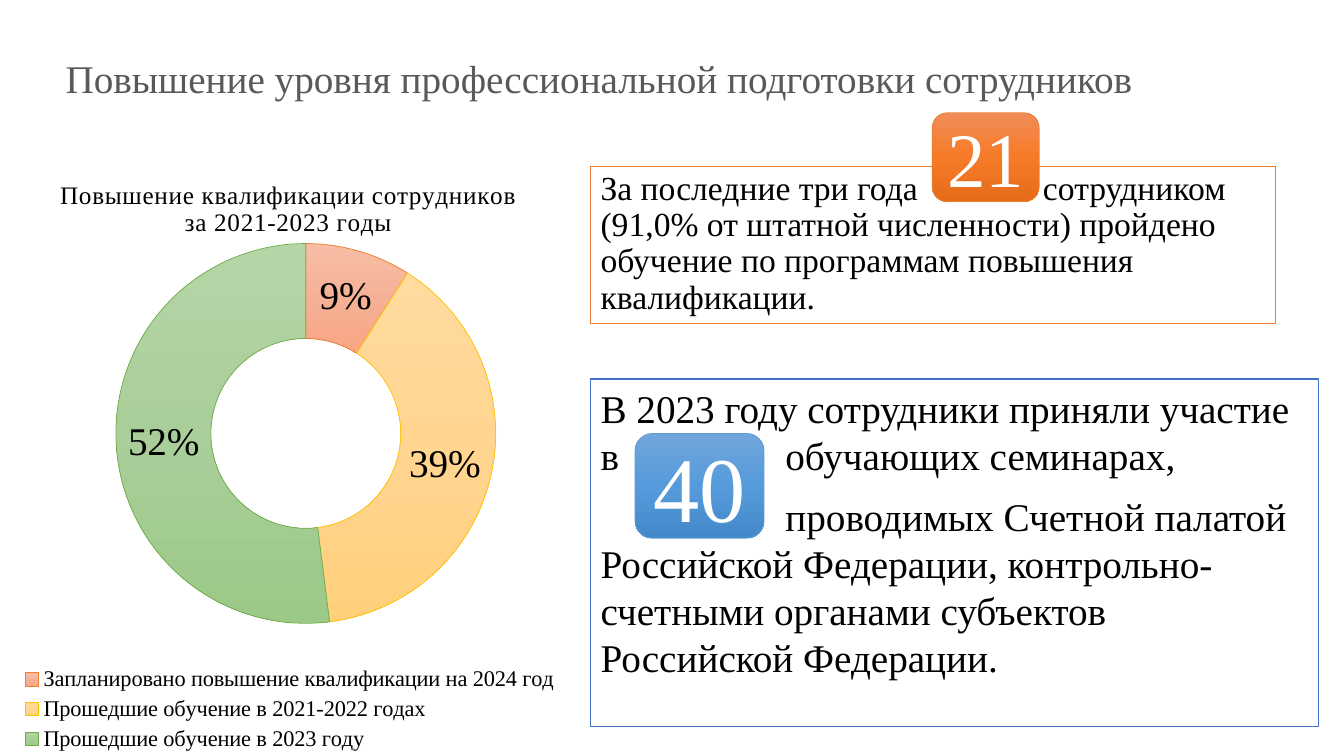
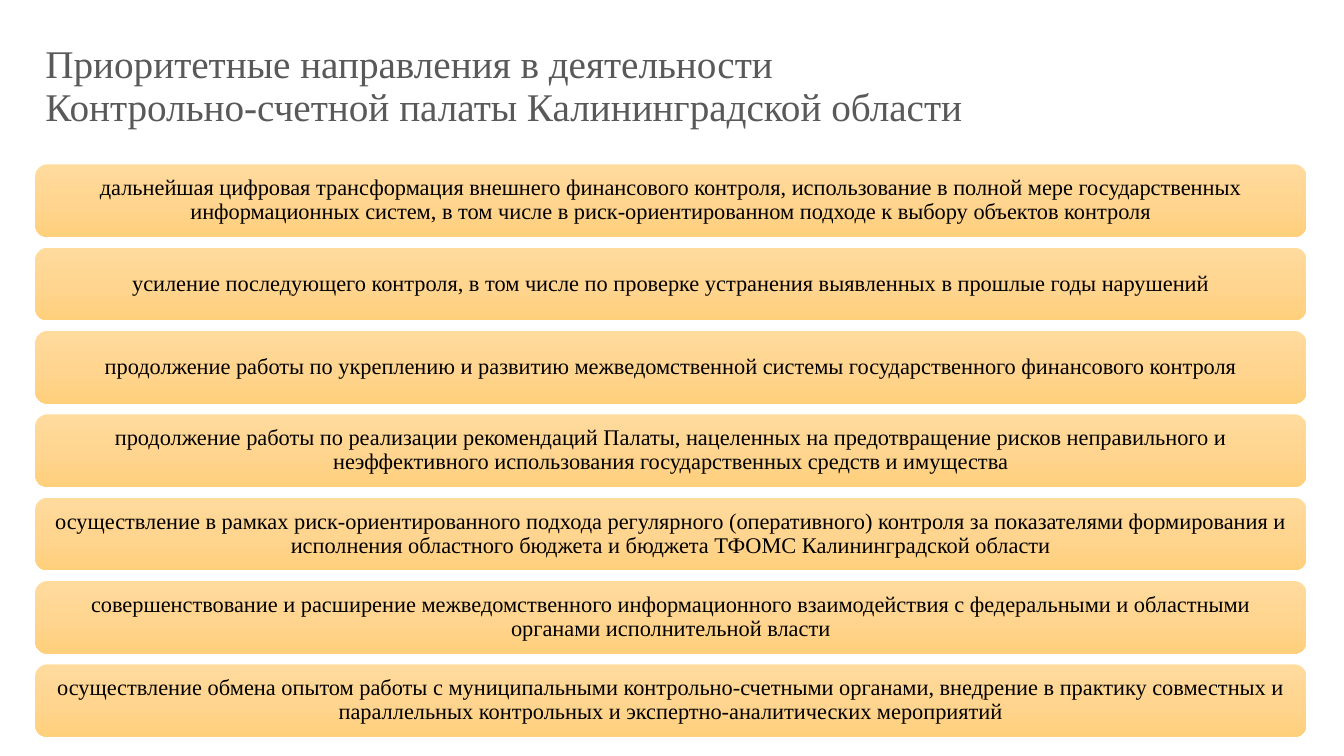
from lxml import etree
from pptx import Presentation
from pptx.chart.data import CategoryChartData
from pptx.dml.color import RGBColor
from pptx.enum.chart import XL_CHART_TYPE, XL_LEGEND_POSITION
from pptx.enum.shapes import MSO_SHAPE
from pptx.enum.text import MSO_ANCHOR, PP_ALIGN
from pptx.oxml import parse_xml
from pptx.oxml.ns import nsdecls, qn
from pptx.util import Pt

DOUGHNUT = XL_CHART_TYPE.DOUGHNUT
LEGEND_BOTTOM = XL_LEGEND_POSITION.BOTTOM
RECTANGLE = MSO_SHAPE.RECTANGLE
ROUNDED = MSO_SHAPE.ROUNDED_RECTANGLE
TOP, MIDDLE = MSO_ANCHOR.TOP, MSO_ANCHOR.MIDDLE
LEFT, CENTER = PP_ALIGN.LEFT, PP_ALIGN.CENTER

FONT = "Times New Roman"
TITLE_ONLY = 5
COLORS = {
    "title": "595959",
    "text": "000000",
    "white": "FFFFFF",
    "orange": "ED7D31",
    "gold": "FFC000",
    "green": "70AD47",
    "blue": "4472C4",
    "sky": "5B9BD5",
}
GRADIENTS = {
    "pale orange": ("F7BDA5", "F5B196", "F8A582"),
    "pale gold": ("FFDB9E", "FFD590", "FFD07C"),
    "pale green": ("B5D5A7", "AACE9A", "9CC987"),
    "sky": ("71A6DB", "559BDB", "448ACA"),
    "orange": ("F18C57", "F67B28", "E56C19"),
}
SHARES = [
    ("Запланировано повышение квалификации на 2024 год", 9, "pale orange", "orange"),
    ("Прошедшие обучение в 2021-2022 годах", 39, "pale gold", "gold"),
    ("Прошедшие обучение в 2023 году", 52, "pale green", "green"),
]
CHART_TITLE = "Повышение квалификации сотрудников\nза 2021-2023 годы"
TRAINED = (
    "За последние три года\tсотрудником (91,0% от штатной численности) "
    "пройдено обучение по программам повышения квалификации."
)
SEMINARS = [
    "В 2023 году сотрудники приняли участие в\tобучающих семинарах,",
    "проводимых Счетной палатой \vРоссийской Федерации, контрольно-счетными "
    "органами субъектов \vРоссийской Федерации.",
]
PRIORITIES = [
    "дальнейшая цифровая трансформация внешнего финансового контроля, использование "
    "в полной мере государственных информационных систем, в том числе в "
    "риск-ориентированном подходе к выбору объектов контроля",
    "усиление последующего контроля, в том числе по проверке устранения выявленных "
    "в прошлые годы нарушений",
    "продолжение работы по укреплению и развитию межведомственной системы "
    "государственного финансового контроля",
    "продолжение работы по реализации рекомендаций Палаты, нацеленных на "
    "предотвращение рисков неправильного и неэффективного использования "
    "государственных средств и имущества",
    "осуществление в рамках риск-ориентированного подхода регулярного (оперативного) "
    "контроля за показателями формирования и исполнения областного бюджета и бюджета "
    "ТФОМС Калининградской области",
    "совершенствование и расширение межведомственного информационного взаимодействия "
    "с федеральными и областными органами исполнительной власти",
    "осуществление обмена опытом работы с муниципальными контрольно-счетными органами, "
    "внедрение в практику совместных и параллельных контрольных и "
    "экспертно-аналитических мероприятий",
]


def rgb(name):
    return RGBColor.from_string(COLORS[name])


def assign(target, **values):
    for name, value in values.items():
        setattr(target, name, value)


def format_font(font, size, color="text"):
    assign(font, name=FONT, size=Pt(size), bold=False)
    font.color.rgb = rgb(color)


def fill_gradient(fill, owner, name):
    """Fill from top to bottom; owner is the XML element that holds the fill."""
    fill.gradient()
    fill.gradient_angle = 270
    stops = next(owner.iter(qn("a:gsLst")))
    for stop in list(stops):
        stops.remove(stop)
    for position, color in zip((0, 50000, 100000), GRADIENTS[name]):
        stop = etree.SubElement(stops, qn("a:gs"), pos=str(position))
        etree.SubElement(stop, qn("a:srgbClr"), val=color)


def draw_line(line, color, width):
    line.color.rgb = rgb(color)
    line.width = Pt(width)


def write(frame, texts, size, color="text", align=LEFT, anchor=MIDDLE,
          spacing=1.0, tab=None):
    """Write one paragraph per text, with an optional tab stop."""
    assign(frame, word_wrap=True, vertical_anchor=anchor)
    for index, text in enumerate(texts):
        para = frame.paragraphs[0] if index == 0 else frame.add_paragraph()
        para.text = text
        if tab:
            tabs = etree.SubElement(para._p.get_or_add_pPr(), qn("a:tabLst"))
            etree.SubElement(tabs, qn("a:tab"), pos=str(Pt(tab)), algn="l")
        assign(para, alignment=align, line_spacing=spacing,
               space_before=Pt(10 if index else 0))
        for span in para.runs:
            format_font(span.font, size, color)


def add_shape(page, kind, box):
    shape = page.shapes.add_shape(kind, *map(Pt, box))
    shape.shadow.inherit = False
    return shape


def add_page(deck, title, left, top):
    page = deck.slides.add_slide(deck.slide_layouts[TITLE_ONLY])
    heading = page.shapes.title
    assign(heading, left=Pt(left), top=Pt(top), width=Pt(828), height=Pt(104.4))
    write(heading.text_frame, [title], 28, "title", spacing=0.9)
    return page


def add_framed_text(page, box, texts, size, color, **layout):
    shape = add_shape(page, RECTANGLE, box)
    shape.fill.background()
    draw_line(shape.line, color, 0.75)
    write(shape.text_frame, texts, size, anchor=TOP, **layout)
    return shape.text_frame


def add_badge(page, box, number, size, color):
    badge = add_shape(page, ROUNDED, box)
    fill_gradient(badge.fill, badge.element, color)
    draw_line(badge.line, color, 0.5)
    write(badge.text_frame, [number], size, "white", CENTER)
    badge.text_frame.word_wrap = False


def add_manual_layout(parent, position, **values):
    """Insert a manual chart layout as the child at the given position."""
    parts = "".join(f'<c:{name} val="{value}"/>' for name, value in values.items())
    for old in parent.findall(qn("c:layout")):
        parent.remove(old)
    parent.insert(position, parse_xml(
        f'<c:layout {nsdecls("c")}><c:manualLayout>{parts}</c:manualLayout></c:layout>'))


def add_shares_chart(page, box):
    data = CategoryChartData(number_format="General")
    data.categories = [share[0] for share in SHARES]
    data.add_series("Series 1", [share[1] for share in SHARES])
    chart = page.shapes.add_chart(DOUGHNUT, *map(Pt, box), data).chart
    format_font(chart.font, 10)

    chart.has_title = True
    title = chart.chart_title
    title.include_in_layout = False
    title.text_frame.text = CHART_TITLE
    for para in title.text_frame.paragraphs:
        format_font(para.font, 18)
        for span in para.runs:
            format_font(span.font, 18)
            span.font._element.set("spc", "50")
    add_manual_layout(title._element, 1, xMode="edge", yMode="edge", x=0.14, y=0.04)

    chart.has_legend = True
    assign(chart.legend, position=LEGEND_BOTTOM, include_in_layout=False)
    format_font(chart.legend.font, 16)

    plot = chart.plots[0]
    plot.vary_by_categories = True
    plot._element.find(qn("c:holeSize")).set("val", "75")
    add_manual_layout(chart._chartSpace.chart.plotArea, 0, layoutTarget="inner",
                      xMode="edge", yMode="edge", x=0.23, y=0.15, w=0.59, h=0.63)
    series = plot.series[0]
    labels = series.data_labels
    assign(labels, show_percentage=True, show_value=False, number_format="0%",
           number_format_is_linked=False)
    format_font(labels.font, 28)
    for index, (_, _, gradient, edge) in enumerate(SHARES):
        form = series.points[index].format
        owner = series._element.findall(qn("c:dPt"))[index]
        fill_gradient(form.fill, owner, gradient)
        draw_line(form.line, edge, 0.5)


def add_training_page(deck):
    page = add_page(deck, "Повышение уровня профессиональной подготовки сотрудников",
                    39.6, 5.8)
    add_shares_chart(page, (-23.8, 109.4, 461.5, 430.6))
    seminars = add_framed_text(page, (421.9, 270.7, 519.8, 248.4), SEMINARS, 28,
                               "blue", tab=132)
    seminars.paragraphs[1]._p.get_or_add_pPr().set("indent", str(Pt(132)))
    add_badge(page, (453.6, 309.6, 92.2, 74.9), "40", 66, "sky")
    add_framed_text(page, (421.9, 118.8, 488.9, 112.3), [TRAINED], 24, "orange",
                    spacing=0.9, tab=316)
    add_badge(page, (666, 80.6, 76.3, 63.4), "21", 55, "orange")


def add_bars(page, box, texts, gap):
    left, top, width, height = box
    bar_height = (height - gap * (len(texts) - 1)) / len(texts)
    for index, text in enumerate(texts):
        bar_top = top + index * (bar_height + gap)
        bar = add_shape(page, ROUNDED, (left, bar_top, width, bar_height))
        fill_gradient(bar.fill, bar.element, "pale gold")
        bar.line.fill.background()
        frame = bar.text_frame
        for side in ("left", "right", "top", "bottom"):
            setattr(frame, f"margin_{side}", Pt(5))
        write(frame, [text], 16, align=CENTER, spacing=0.9)


def add_priorities_page(deck):
    page = add_page(deck, "Приоритетные направления в деятельности \v"
                    "Контрольно-счетной палаты Калининградской области", 25.2, 10.1)
    add_bars(page, (25.2, 117.4, 907.9, 409), PRIORITIES, 7.7)


def main():
    deck = Presentation()
    assign(deck, slide_width=Pt(960), slide_height=Pt(540))
    add_training_page(deck)
    add_priorities_page(deck)
    deck.save("out.pptx")


if __name__ == "__main__":
    main()
